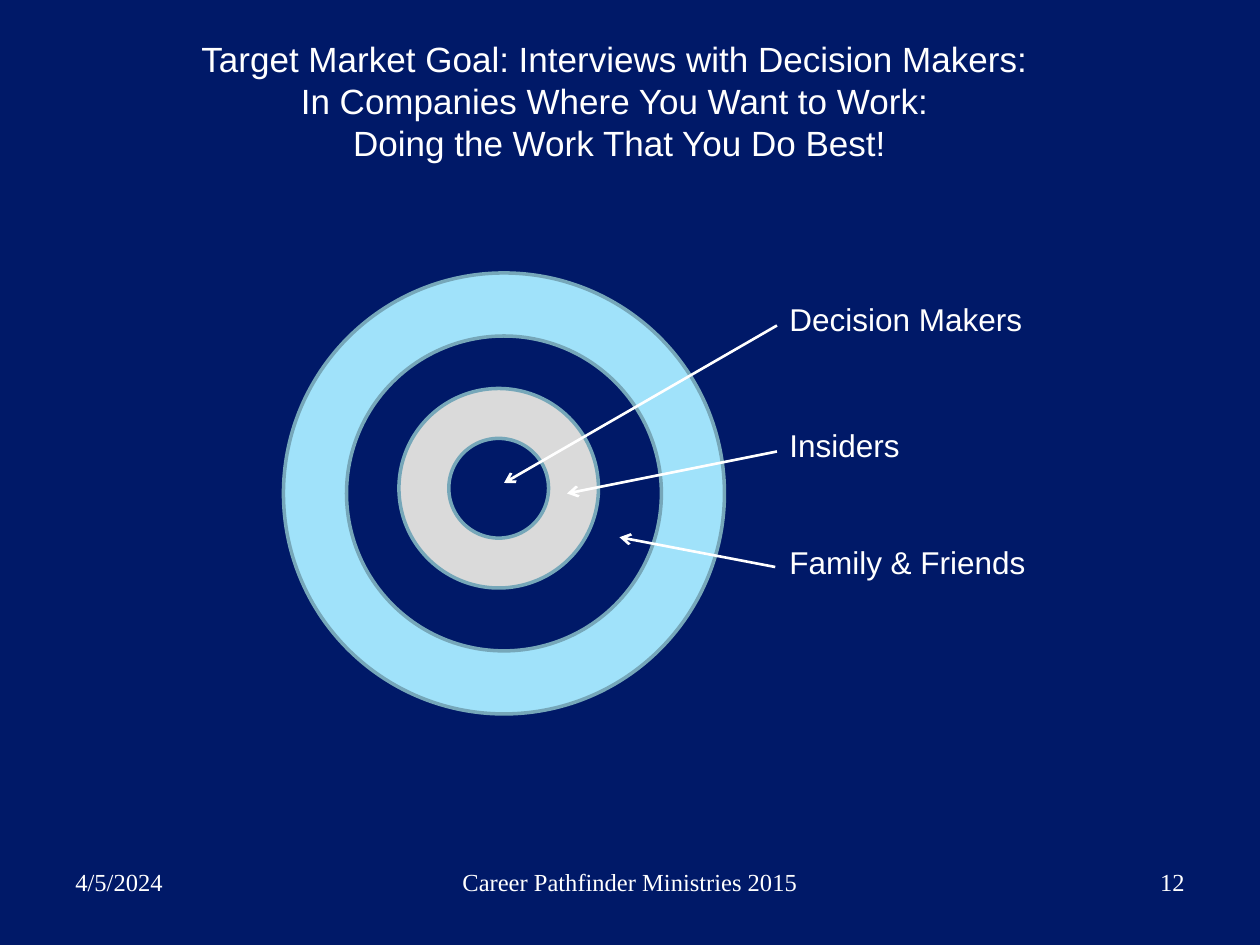
import pptx
import pptx.dml.color
import pptx.enum.shapes
import pptx.enum.text
import pptx.oxml
import pptx.oxml.ns
import pptx.util

Pt = pptx.util.Pt
ALIGN = pptx.enum.text.PP_ALIGN

COLORS = {
    "background": "001968",
    "text": "FFFFFF",
    "inner": "DADADA",
    "outer": "A0E2FA",
    "outline": "76A7B9",
}

TITLE = [
    "Target Market Goal: Interviews with Decision Makers: ",
    "In Companies Where You Want to Work: ",
    "Doing the Work That You Do Best!",
]
FOOTERS = [
    ("4/5/2024", 36, 168, ALIGN.LEFT),
    ("Career Pathfinder Ministries 2015", 246, 228, ALIGN.CENTER),
    ("12", 516, 168, ALIGN.RIGHT),
]
RINGS = [
    ("inner", 228, 222, 114, 0.25),
    ("outer", 162, 156, 252, 0.143),
]
LABELS = [
    ("Decision Makers", 168, 162, (444, 186), (288, 276)),
    ("Insiders", 240, 84, (444, 258), (324, 282)),
    ("Family & Friends", 306.5, 174, (443, 324), (354, 307)),
]


def color(name):
    return pptx.dml.color.RGBColor.from_string(COLORS[name])


def add_text(s, lines, box, font, size, align=ALIGN.LEFT):
    tf = s.shapes.add_textbox(*map(Pt, box)).text_frame
    tf.word_wrap = True
    tf.text = "\n".join(lines)
    for p in tf.paragraphs:
        p.alignment = align
        p.font.name = font
        p.font.size = Pt(size)
        p.font.color.rgb = color("text")


def add_ring(s, fill, left, top, size, thickness):
    sp = s.shapes.add_shape(
        pptx.enum.shapes.MSO_SHAPE.DONUT, *map(Pt, (left, top, size, size)))
    sp.adjustments[0] = thickness
    sp.shadow.inherit = False
    sp.fill.solid()
    sp.fill.fore_color.rgb = color(fill)
    sp.line.color.rgb = color("outline")
    sp.line.width = Pt(2)


def add_arrow(s, start, end):
    sp = s.shapes.add_connector(
        pptx.enum.shapes.MSO_CONNECTOR.STRAIGHT, *map(Pt, start + end))
    sp.line.color.rgb = color("text")
    sp.line.width = Pt(1.5)
    ns = pptx.oxml.ns.nsdecls("a")
    ln = sp.line._get_or_add_ln()
    ln.append(pptx.oxml.parse_xml(f'<a:tailEnd {ns} type="arrow"/>'))
    sp._element.spPr.append(pptx.oxml.parse_xml(f"<a:effectLst {ns}/>"))


def main():
    prs = pptx.Presentation()
    prs.slide_width, prs.slide_height = Pt(720), Pt(540)
    s = prs.slides.add_slide(prs.slide_layouts[6])
    s.background.fill.solid()
    s.background.fill.fore_color.rgb = color("background")

    for ring in RINGS:
        add_ring(s, *ring)
    for text, top, width, start, end in LABELS:
        add_arrow(s, start, end)
        add_text(s, [text], (444, top, width, 29), "Arial", 18)
    add_text(s, TITLE, (18, 18, 672, 80), "Arial", 20, ALIGN.CENTER)
    for text, left, width, align in FOOTERS:
        add_text(s, [text], (left, 492, width, 37.5),
                 "Times New Roman", 14, align)
    prs.save("out.pptx")


if __name__ == "__main__":
    main()
